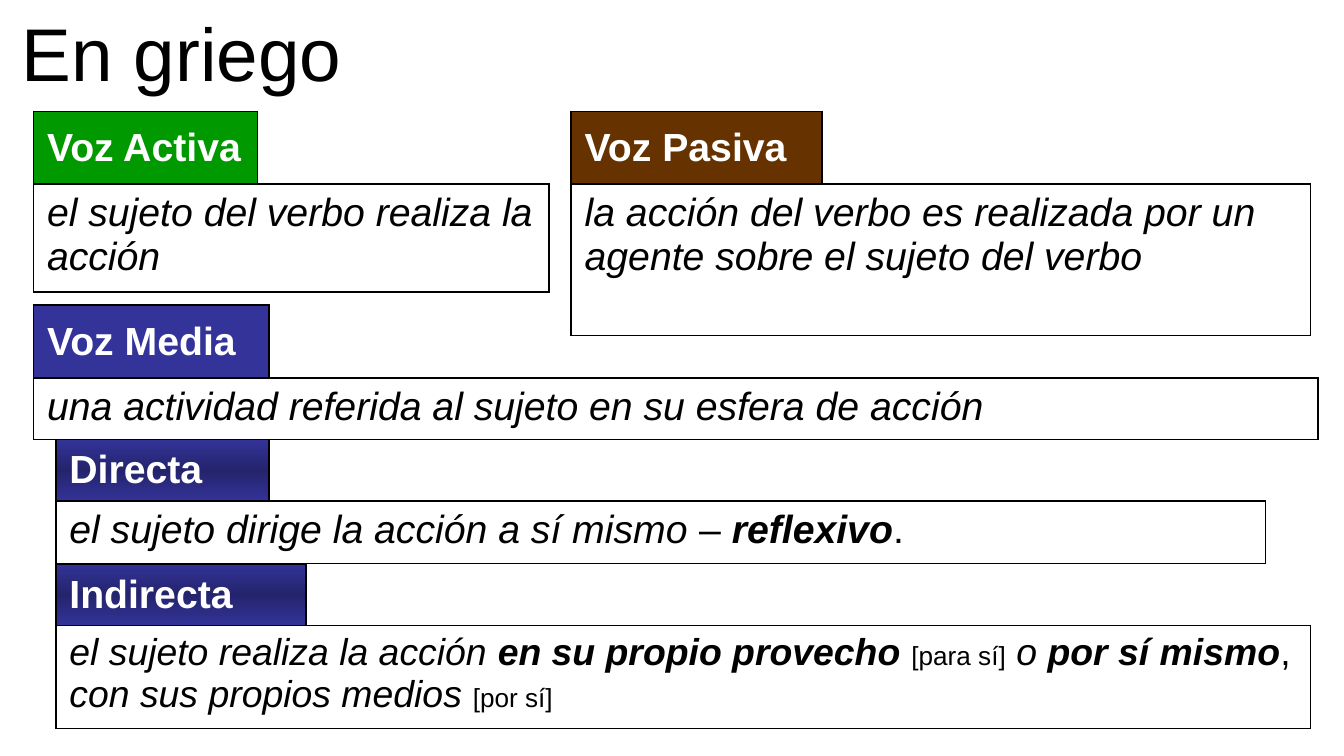
from collections import namedtuple
from dataclasses import dataclass

from lxml.etree import SubElement
from pptx import Presentation
from pptx.dml.color import RGBColor
from pptx.enum.text import MSO_ANCHOR as Anchor, MSO_AUTO_SIZE as AutoSize, PP_ALIGN as Align
from pptx.oxml import parse_xml
from pptx.oxml.ns import nsdecls, qn
from pptx.util import Pt

Box = namedtuple("Box", "left top width height")
Span = namedtuple("Span", "text bold italic size")


@dataclass(frozen=True)
class Theme:
    font: str = "Arial"
    ink: str = "000000"
    light: str = "FFFFFF"
    active: str = "009900"
    passive: str = "663300"
    middle: str = "333399"
    middle_dark: str = "24246D"
    title: int = 40
    text: int = 21
    compact: int = 20
    note: int = 14
    line: int = 1


THEME = Theme()
PLAIN_GRID = "{2D5ABB26-0587-4C30-8999-92F81FD0307C}"
MIDDLE_GRADIENT = (THEME.middle, THEME.middle_dark, THEME.middle)


def italic(text, size=THEME.text):
    return Span(text, False, True, size)


def strong(text, size=THEME.text):
    return Span(text, True, True, size)


def upright(text, size=THEME.text):
    return Span(text, False, False, size)


def add_spans(para, spans, color):
    for span in spans:
        run = para.add_run()
        run.text = span.text
        run.font.name = THEME.font
        run.font.size = Pt(span.size)
        run.font.bold = span.bold
        run.font.italic = span.italic
        run.font.color.rgb = RGBColor.from_string(color)


def fill_cell(cell, colors):
    if not colors:
        cell.fill.background()
    elif len(colors) == 1:
        cell.fill.solid()
        cell.fill.fore_color.rgb = RGBColor.from_string(colors[0])
    else:
        step = 100000 // (len(colors) - 1)
        stops = "".join(
            f'<a:gs pos="{index * step}"><a:srgbClr val="{color}"/></a:gs>'
            for index, color in enumerate(colors)
        )
        cell._tc.get_or_add_tcPr().append(parse_xml(
            f'<a:gradFill {nsdecls("a")} rotWithShape="1"><a:gsLst>{stops}</a:gsLst>'
            '<a:lin ang="5400000" scaled="1"/></a:gradFill>'
        ))


def border_cell(cell, sides):
    properties = cell._tc.get_or_add_tcPr()
    for index, side in enumerate("LRTB"):
        edge = SubElement(properties, qn(f"a:ln{side}"), w=str(Pt(THEME.line)))
        if side in sides:
            paint = SubElement(edge, qn("a:solidFill"))
            SubElement(paint, qn("a:srgbClr"), val=THEME.ink)
        else:
            SubElement(edge, qn("a:noFill"))
        properties.insert(index, edge)


def add_title(page, box, text):
    title = page.shapes.title
    title.left, title.top, title.width, title.height = map(Pt, box)
    frame = title.text_frame
    frame.word_wrap = False
    frame.auto_size = AutoSize.SHAPE_TO_FIT_TEXT
    frame.vertical_anchor = Anchor.TOP
    para = frame.paragraphs[0]
    para.alignment = Align.LEFT
    para.line_spacing = 1.0
    add_spans(para, [upright(text, THEME.title)], THEME.ink)


def add_voice(page, box, tab_width, tab_height, label, colors, spans):
    table = page.shapes.add_table(2, 2, *map(Pt, box)).table
    table._tbl.tblPr.find(qn("a:tableStyleId")).text = PLAIN_GRID
    table.first_row = table.horz_banding = False
    for column, width in zip(table.columns, (tab_width, box.width - tab_width)):
        column.width = Pt(width)
    for row, height in zip(table.rows, (tab_height, box.height - tab_height)):
        row.height = Pt(height)

    tab, gap = table.cell(0, 0), table.cell(0, 1)
    body, body_end = table.cell(1, 0), table.cell(1, 1)
    body.merge(body_end)
    for cell, fill, sides in (
        (tab, colors, "LRTB"),
        (gap, (), "LB"),
        (body, (), "LRTB"),
        (body_end, (), "RTB"),
    ):
        fill_cell(cell, fill)
        border_cell(cell, sides)
    for cell, anchor, content, color in (
        (tab, Anchor.MIDDLE, [Span(label, True, False, THEME.text)], THEME.light),
        (body, Anchor.TOP, spans, THEME.ink),
    ):
        cell.vertical_anchor = anchor
        add_spans(cell.text_frame.paragraphs[0], content, color)


def add_main_voices(page):
    add_voice(page, Box(18, 59.75, 276, 94.5), 120, 39, "Voz Activa", (THEME.active,),
              [italic("el sujeto del verbo realiza la acción")])
    add_voice(page, Box(306, 59.75, 396, 120), 134.5, 39, "Voz Pasiva", (THEME.passive,),
              [italic("la acción del verbo es realizada por un agente sobre el sujeto del verbo")])
    add_voice(page, Box(18, 163.5, 688, 72), 126, 39, "Voz Media", (THEME.middle,),
              [italic("una actividad referida al sujeto en su esfera de acción")])


def add_middle_kinds(page):
    small = THEME.compact
    add_voice(page, Box(30, 235.5, 648, 66.5), 114, 33, "Directa", MIDDLE_GRADIENT, [
        italic("el sujeto dirige la acción a sí mismo"),
        upright(" – "),
        strong("reflexivo"),
        upright("."),
    ])
    add_voice(page, Box(30, 302, 672, 86.4), 134, 33, "Indirecta", MIDDLE_GRADIENT, [
        italic("el sujeto realiza la acción ", small),
        strong("en su propio provecho ", small),
        upright("[para sí]", THEME.note),
        upright(" ", small),
        italic("o ", small),
        strong("por sí mismo", small),
        upright(", ", small),
        italic("con sus propios medios ", small),
        upright("[por sí]", THEME.note),
    ])


def main():
    deck = Presentation()
    deck.slide_width, deck.slide_height = Pt(720), Pt(405)
    page = deck.slides.add_slide(deck.slide_layouts[5])
    add_title(page, Box(4.5, 0, 187, 55.5), "En griego")
    add_main_voices(page)
    add_middle_kinds(page)
    deck.save("out.pptx")


if __name__ == "__main__":
    main()
